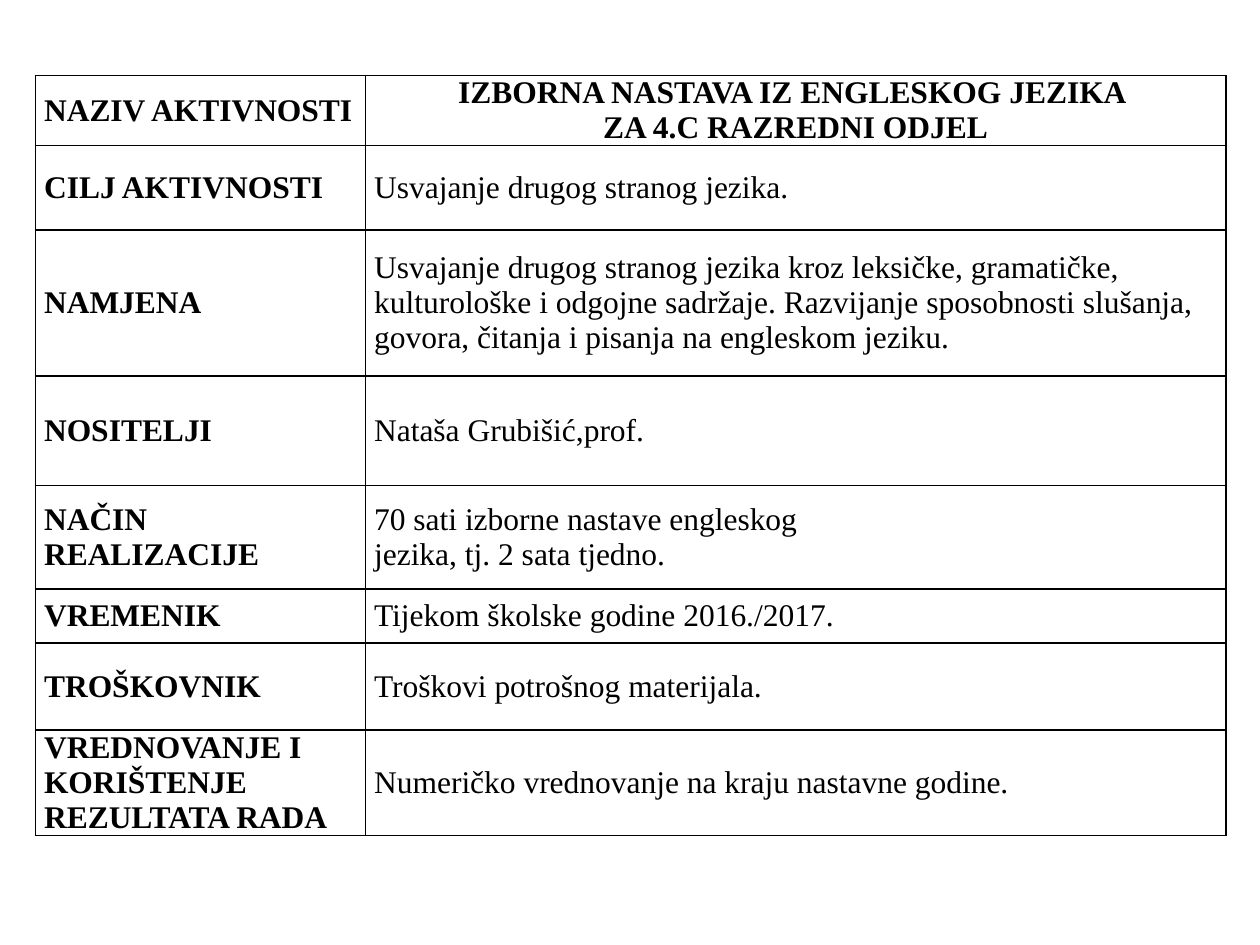
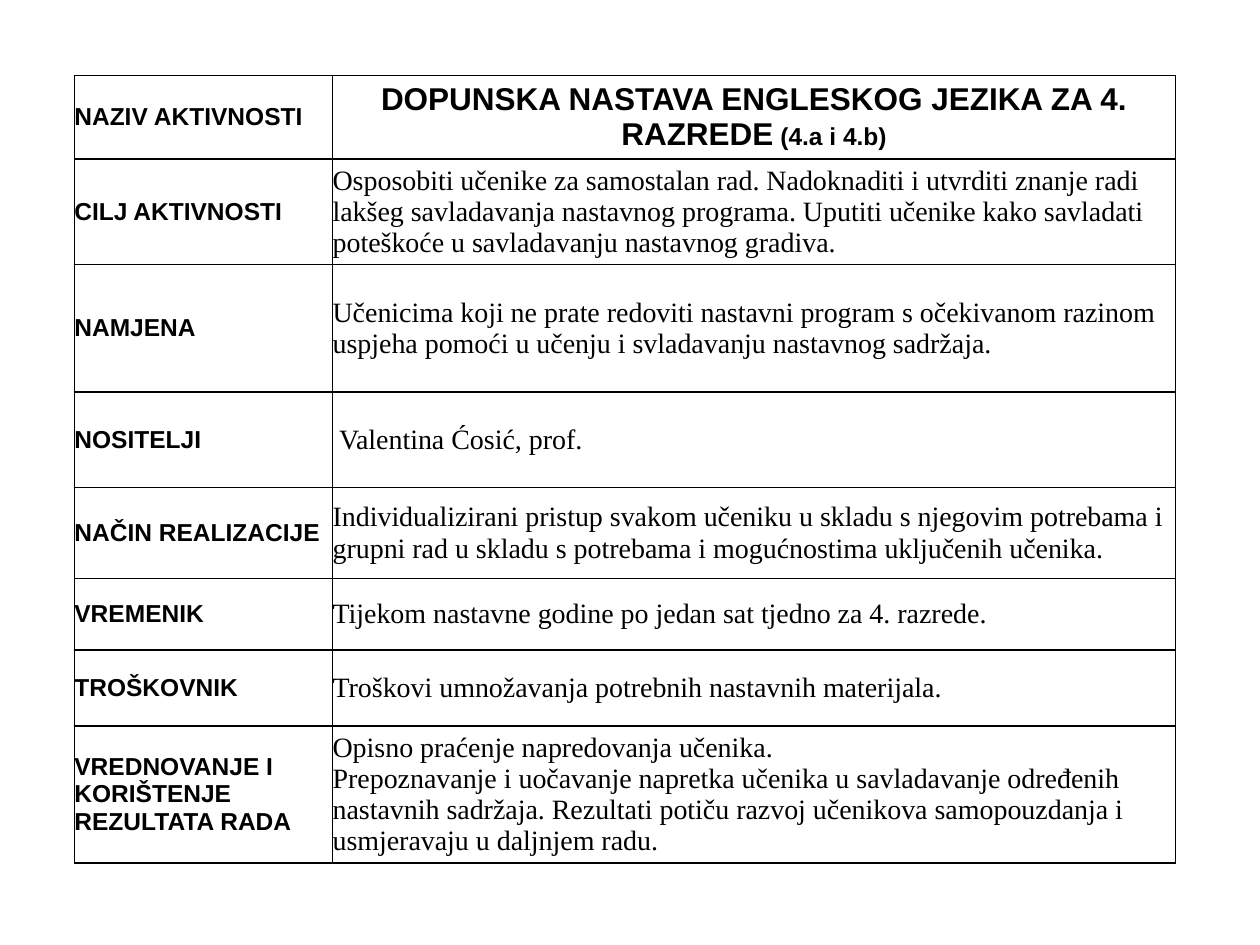
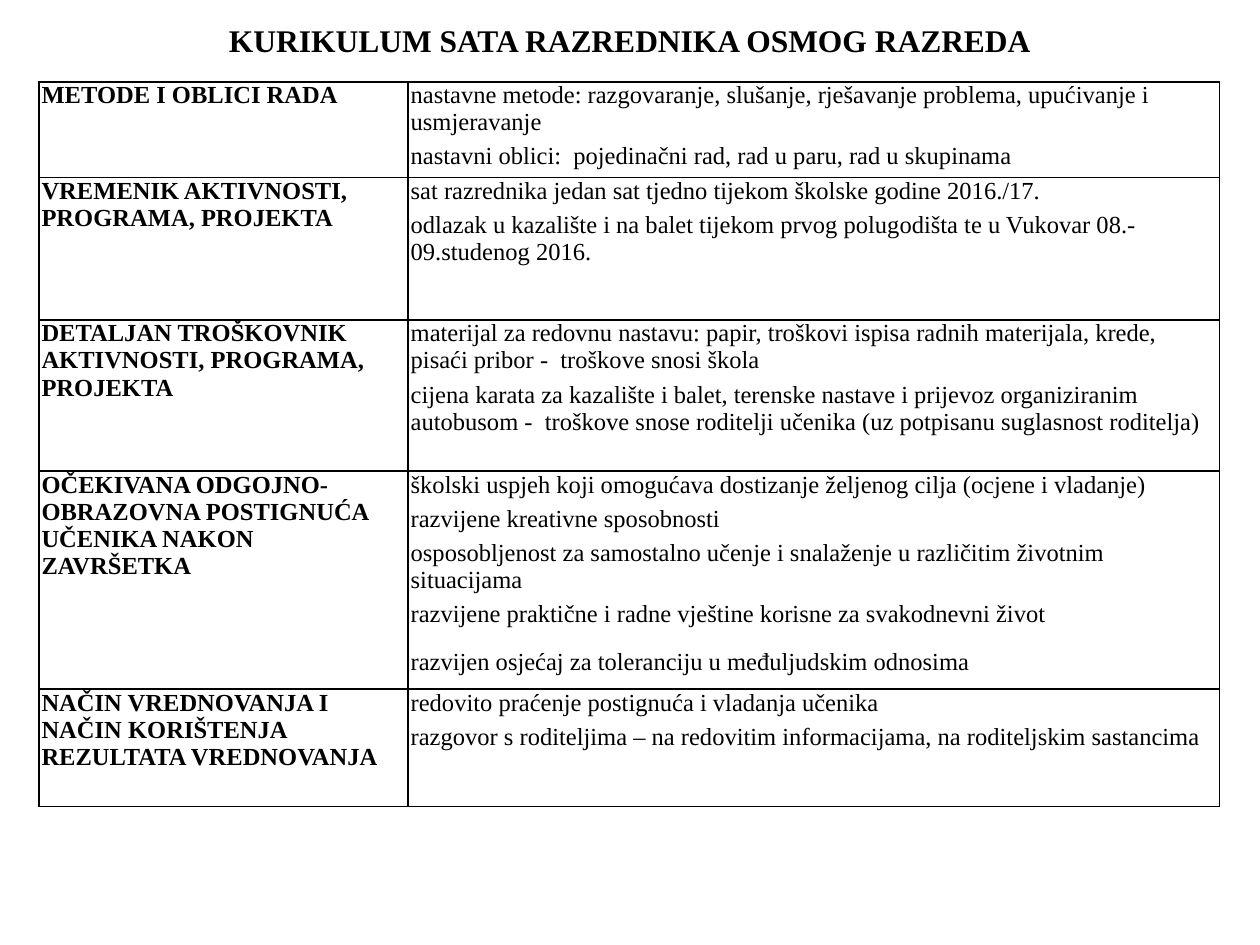
from dataclasses import dataclass
from itertools import product

from lxml.etree import SubElement
from pptx import Presentation
from pptx.dml.color import RGBColor
from pptx.enum.text import MSO_ANCHOR, PP_ALIGN
from pptx.oxml.ns import qn
from pptx.util import Inches, Pt


@dataclass(frozen=True)
class Theme:
    ink: RGBColor = RGBColor(0, 0, 0)
    serif: str = "Times New Roman"
    sans: str = "Arial"
    large: int = 18
    medium: int = 16
    small: int = 14
    border: int = 1
    gap: int = 4
    wide_gap: int = 12


theme = Theme()

ACTIVITY_LABELS = [
    "NAZIV AKTIVNOSTI",
    "CILJ AKTIVNOSTI",
    "NAMJENA",
    "NOSITELJI",
    "NAČIN REALIZACIJE",
    "VREMENIK",
    "TROŠKOVNIK",
    "VREDNOVANJE I KORIŠTENJE REZULTATA RADA",
]


def format_text(frame, font, size, bold):
    for para in frame.paragraphs:
        for span in para.runs:
            span.font.name = font
            span.font.size = Pt(size)
            span.font.bold = bold
            span.font.color.rgb = theme.ink


def add_grid(page, left, top, columns, heights, rows, margins, anchor, label_style, body_style):
    """Add a bordered table of bold labels and plain descriptions."""
    side, edge = map(Inches, margins)
    grid = page.shapes.add_table(
        len(rows), len(columns), Inches(left), Inches(top),
        Inches(sum(columns)), Inches(sum(heights)),
    ).table
    grid.first_row = grid.horz_banding = False
    for column, width in zip(grid.columns, columns):
        column.width = Inches(width)
    for row, height in zip(grid.rows, heights):
        row.height = Inches(height)

    for row, column in product(range(len(rows)), range(len(columns))):
        cell = grid.cell(row, column)
        cell.text = rows[row][column]
        cell.margin_left = cell.margin_right = side
        cell.margin_top = cell.margin_bottom = edge
        cell.vertical_anchor = anchor
        properties = cell._tc.get_or_add_tcPr()
        for border in ("lnL", "lnR", "lnT", "lnB"):
            line = SubElement(properties, qn(f"a:{border}"), w=str(Pt(theme.border)))
            fill = SubElement(line, qn("a:solidFill"))
            SubElement(fill, qn("a:srgbClr"), val=str(theme.ink))
        cell.fill.background()
        is_label = column == 0
        format_text(cell.text_frame, *(label_style if is_label else body_style), is_label)
    return grid


deck = Presentation()
deck.slide_width, deck.slide_height = Inches(10), Inches(7.5)
title_only, blank = deck.slide_layouts[5], deck.slide_layouts[6]

# Elective and remedial English: the same eight labels on both slides
elective = [
    "IZBORNA NASTAVA IZ ENGLESKOG JEZIKA \nZA 4.C RAZREDNI ODJEL",
    "Usvajanje drugog stranog jezika.",
    "Usvajanje drugog stranog jezika kroz leksičke, gramatičke, kulturološke i odgojne "
    "sadržaje. Razvijanje sposobnosti slušanja, govora, čitanja i pisanja na engleskom jeziku.",
    "Nataša Grubišić,prof.",
    "70 sati izborne nastave engleskog\njezika, tj. 2 sata tjedno.",
    "Tijekom školske godine 2016./2017.",
    "Troškovi potrošnog materijala.",
    "Numeričko vrednovanje na kraju nastavne godine.",
]
remedial = [
    "DOPUNSKA NASTAVA ENGLESKOG JEZIKA ZA 4. RAZREDE",
    "Osposobiti učenike za samostalan rad. Nadoknaditi i utvrditi znanje radi lakšeg "
    "savladavanja nastavnog programa. Uputiti učenike kako savladati poteškoće u "
    "savladavanju nastavnog gradiva.",
    "Učenicima koji ne prate redoviti nastavni program s očekivanom razinom uspjeha "
    "pomoći u učenju i svladavanju nastavnog sadržaja.",
    " Valentina Ćosić, prof.",
    "Individualizirani pristup svakom učeniku u skladu s njegovim potrebama i grupni rad "
    "u skladu s potrebama i mogućnostima uključenih učenika.",
    "Tijekom nastavne godine po jedan sat tjedno za 4. razrede.",
    "Troškovi umnožavanja potrebnih nastavnih materijala.",
    "Opisno praćenje napredovanja učenika.\n"
    "Prepoznavanje i uočavanje napretka učenika u savladavanje određenih nastavnih "
    "sadržaja. Rezultati potiču razvoj učenikova samopouzdanja i usmjeravaju u daljnjem radu.",
]
activities = [
    (elective, 0.28, (2.62, 6.83), (0.51, 0.67, 1.16, 0.87, 0.82, 0.43, 0.69, 0.84),
     (0.07, 0), (theme.serif, theme.large), (theme.serif, theme.large)),
    (remedial, 0.59, (2.05, 6.69), (0.57, 0.8, 1.01, 0.76, 0.72, 0.57, 0.6, 1.03),
     (0, 0.05), (theme.sans, theme.small), (theme.serif, theme.medium)),
]
for texts, left, columns, heights, margins, label_style, body_style in activities:
    page = deck.slides.add_slide(blank)
    grid = add_grid(page, left, 0.6, columns, heights, list(zip(ACTIVITY_LABELS, texts)),
                    margins, MSO_ANCHOR.MIDDLE, label_style, body_style)
    heading = grid.cell(0, 1).text_frame
    for para in heading.paragraphs:
        para.alignment = PP_ALIGN.CENTER
    if texts is remedial:
        heading.paragraphs[0].add_run().text = " (4.a i 4.b)"
    format_text(heading, label_style[0], theme.large, True)
    if texts is remedial:
        heading.paragraphs[0].runs[-1].font.size = Pt(theme.small)

# Class-teacher curriculum
curriculum = [
    ("METODE I OBLICI RADA",
     "nastavne metode: razgovaranje, slušanje, rješavanje problema, upućivanje i usmjeravanje\n"
     "nastavni oblici:  pojedinačni rad, rad u paru, rad u skupinama"),
    ("VREMENIK AKTIVNOSTI, PROGRAMA, PROJEKTA",
     "sat razrednika jedan sat tjedno tijekom školske godine 2016./17.\n"
     "odlazak u kazalište i na balet tijekom prvog polugodišta te u Vukovar "
     "08.-09.studenog 2016."),
    ("DETALJAN TROŠKOVNIK AKTIVNOSTI, PROGRAMA, PROJEKTA",
     "materijal za redovnu nastavu: papir, troškovi ispisa radnih materijala, krede, "
     "pisaći pribor -  troškove snosi škola\n"
     "cijena karata za kazalište i balet, terenske nastave i prijevoz organiziranim "
     "autobusom -  troškove snose roditelji učenika (uz potpisanu suglasnost roditelja)"),
    ("OČEKIVANA ODGOJNO-OBRAZOVNA POSTIGNUĆA UČENIKA NAKON ZAVRŠETKA",
     "školski uspjeh koji omogućava dostizanje željenog cilja (ocjene i vladanje)\n"
     "razvijene kreativne sposobnosti\n"
     "osposobljenost za samostalno učenje i snalaženje u različitim životnim situacijama\n"
     "razvijene praktične i radne vještine korisne za svakodnevni život\n"
     "razvijen osjećaj za toleranciju u međuljudskim odnosima"),
    ("NAČIN VREDNOVANJA I NAČIN KORIŠTENJA REZULTATA VREDNOVANJA",
     "redovito praćenje postignuća i vladanja učenika\n"
     "razgovor s roditeljima – na redovitim informacijama, na roditeljskim sastancima"),
]
page = deck.slides.add_slide(title_only)
title = page.shapes.title
title.left, title.top = 0, Inches(0.07)
title.width, title.height = deck.slide_width, Inches(0.5)
title.text_frame.text = "KURIKULUM SATA RAZREDNIKA OSMOG RAZREDA"
title.text_frame.vertical_anchor = MSO_ANCHOR.MIDDLE
title.text_frame.paragraphs[0].alignment = PP_ALIGN.CENTER
format_text(title.text_frame, theme.serif, theme.large, True)

small_serif = (theme.serif, theme.small)
grid = add_grid(page, 0.31, 0.65, (2.93, 6.44), (0.76, 1.13, 1.2, 1.73, 0.93), curriculum,
                (0.02, 0), MSO_ANCHOR.TOP, small_serif, small_serif)
for row in range(len(curriculum)):
    for para in grid.cell(row, 1).text_frame.paragraphs[1:]:
        para.space_before = Pt(theme.gap)
grid.cell(3, 1).text_frame.paragraphs[-1].space_before = Pt(theme.wide_gap)

deck.save("out.pptx")
